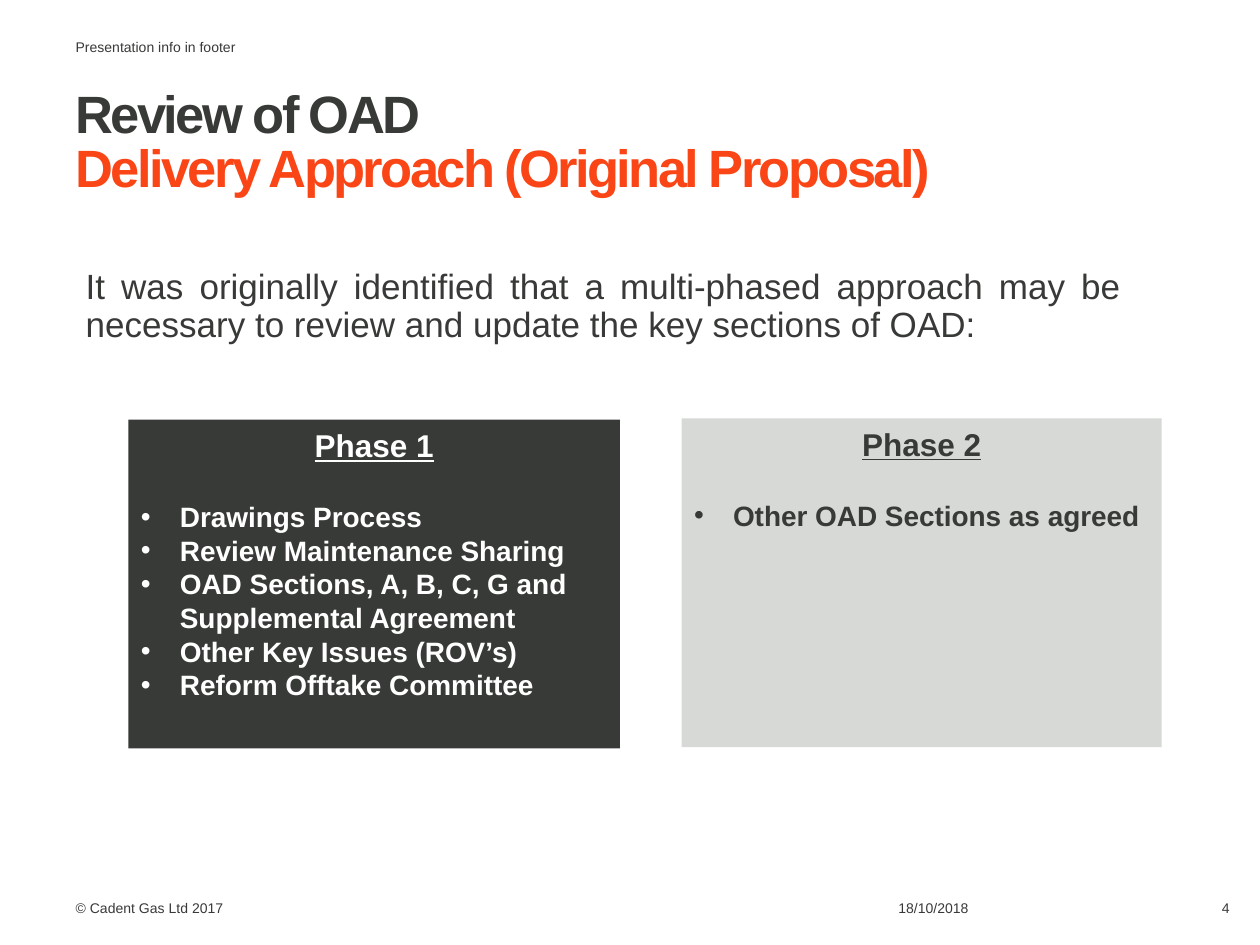
"""Build the OAD review slide with its two delivery phases."""
from copy import deepcopy

from lxml import etree
from pptx import Presentation
from pptx import util as u
from pptx.dml.color import RGBColor
from pptx.enum import shapes, text
from pptx.oxml.ns import qn

COLOURS = {"dark": "373A36", "orange": "FA4616", "grey": "D6D9D6", "white": "FFFFFF"}
ALIGN = text.PP_ALIGN
ANCHOR = text.MSO_ANCHOR


def add_text(paragraph, wording, size, colour="dark", bold=False, underline=False, spacing=None):
    """Add a formatted run to a paragraph and return it."""
    run = paragraph.add_run()
    run.text = wording
    font = run.font
    font.name, font.size, font.bold, font.underline = "Arial", u.Pt(size), bold, underline
    font.color.rgb = RGBColor.from_string(COLOURS[colour])
    if spacing is not None:
        run._r.get_or_add_rPr().set("spc", str(int(spacing * 100)))
    return run


def set_bullet(paragraph, character=None, indent=0.0):
    """Give a paragraph a hanging bullet, or none."""
    properties = paragraph._p.get_or_add_pPr()
    properties.set("marL", str(u.Inches(indent)))
    properties.set("indent", str(-u.Inches(indent)))
    if character:
        etree.SubElement(properties, qn("a:buFont")).set("typeface", "Arial")
        etree.SubElement(properties, qn("a:buChar")).set("char", character)
    else:
        etree.SubElement(properties, qn("a:buNone"))


class SlideBuilder:
    """Hold the current slide and draw its kinds of element."""

    def __init__(self, slide):
        self.slide = slide

    def place(self, shape, left, top, width, height):
        """Move and size a shape."""
        shape.left, shape.top = u.Inches(left), u.Inches(top)
        shape.width, shape.height = u.Inches(width), u.Inches(height)

    def frame(self, shape, anchor=ANCHOR.TOP, inset=None):
        """Prepare the text frame of a shape and return it."""
        frame = shape.text_frame
        frame.word_wrap = True
        frame.auto_size = text.MSO_AUTO_SIZE.NONE
        frame.vertical_anchor = anchor
        if inset is not None:
            frame.margin_left = frame.margin_right = u.Inches(inset)
            frame.margin_top = frame.margin_bottom = u.Inches(inset)
        return frame

    def title(self, first, second):
        """Write the two-coloured title."""
        shape = self.slide.shapes.title
        self.place(shape, 0.6, 0.72, 7.86, 1.45)
        paragraph = self.frame(shape, inset=0).paragraphs[0]
        paragraph.alignment, paragraph.line_spacing = ALIGN.LEFT, 0.85
        style = {"size": 30, "bold": True, "spacing": -1.5}
        run = add_text(paragraph, first, **style)
        paragraph.add_line_break()
        paragraph._p[-1].append(deepcopy(run._r.rPr))
        add_text(paragraph, second, colour="orange", **style)

    def body(self, wording):
        """Write the introduction in the body placeholder."""
        shape = self.slide.placeholders[1]
        self.place(shape, 0.58, 2.09, 8.42, 1.1)
        paragraph = self.frame(shape).paragraphs[0]
        paragraph.alignment, paragraph.line_spacing = ALIGN.JUSTIFY, 0.9
        paragraph.space_before = u.Pt(0)
        set_bullet(paragraph)
        add_text(paragraph, wording, size=20)

    def label(self, wording, left, top, width, anchor=ANCHOR.BOTTOM, align=ALIGN.LEFT):
        """Add a small header or footer text."""
        shape = self.slide.shapes.add_textbox(
            u.Inches(left), u.Inches(top), u.Inches(width), u.Inches(0.3))
        paragraph = self.frame(shape, anchor, inset=0).paragraphs[0]
        paragraph.alignment = align
        add_text(paragraph, wording, size=8)

    def phase(self, heading, items, left, top, width, fill, colour):
        """Add a filled panel with a heading and bullets."""
        shape = self.slide.shapes.add_shape(
            shapes.MSO_SHAPE.RECTANGLE,
            u.Inches(left), u.Inches(top), u.Inches(width), u.Inches(2.61))
        shape.shadow.inherit = False
        shape.fill.solid()
        shape.fill.fore_color.rgb = RGBColor.from_string(COLOURS[fill])
        shape.line.fill.background()
        frame = self.frame(shape)
        paragraph = frame.paragraphs[0]
        paragraph.alignment = ALIGN.CENTER
        paragraph.space_after = u.Pt(20.7)
        add_text(paragraph, heading, size=18, colour=colour, bold=True, underline=True)
        for item in items:
            paragraph = frame.add_paragraph()
            paragraph.alignment = ALIGN.LEFT
            set_bullet(paragraph, "•", 0.31)
            add_text(paragraph, item, size=16, colour=colour, bold=True)


def main():
    """Build and save the presentation."""
    presentation = Presentation()
    presentation.slide_width, presentation.slide_height = u.Inches(10), u.Inches(7.5)
    builder = SlideBuilder(presentation.slides.add_slide(presentation.slide_layouts[1]))
    builder.title("Review of OAD", "Delivery Approach (Original Proposal)")
    builder.body("It was originally identified that a multi-phased approach may be "
                 "necessary to review and update the key sections of OAD:")
    builder.label("Presentation info in footer", 0.6, 0.31, 4.64, anchor=ANCHOR.TOP)
    builder.label("© Cadent Gas Ltd 2017", 0.6, 6.97, 1.99)
    builder.label("18/10/2018", 7.13, 6.97, 1.14)
    builder.label("4", 9.05, 6.97, 0.71, align=ALIGN.RIGHT)
    builder.phase("Phase 1", [
        "Drawings Process",
        "Review Maintenance Sharing",
        "OAD Sections, A, B, C, G and Supplemental Agreement",
        "Other Key Issues (ROV’s)",
        "Reform Offtake Committee",
    ], 1.02, 3.33, 3.9, fill="dark", colour="white")
    builder.phase("Phase 2", ["Other OAD Sections as agreed"],
                  5.41, 3.32, 3.81, fill="grey", colour="dark")
    presentation.save("out.pptx")


if __name__ == "__main__":
    main()
